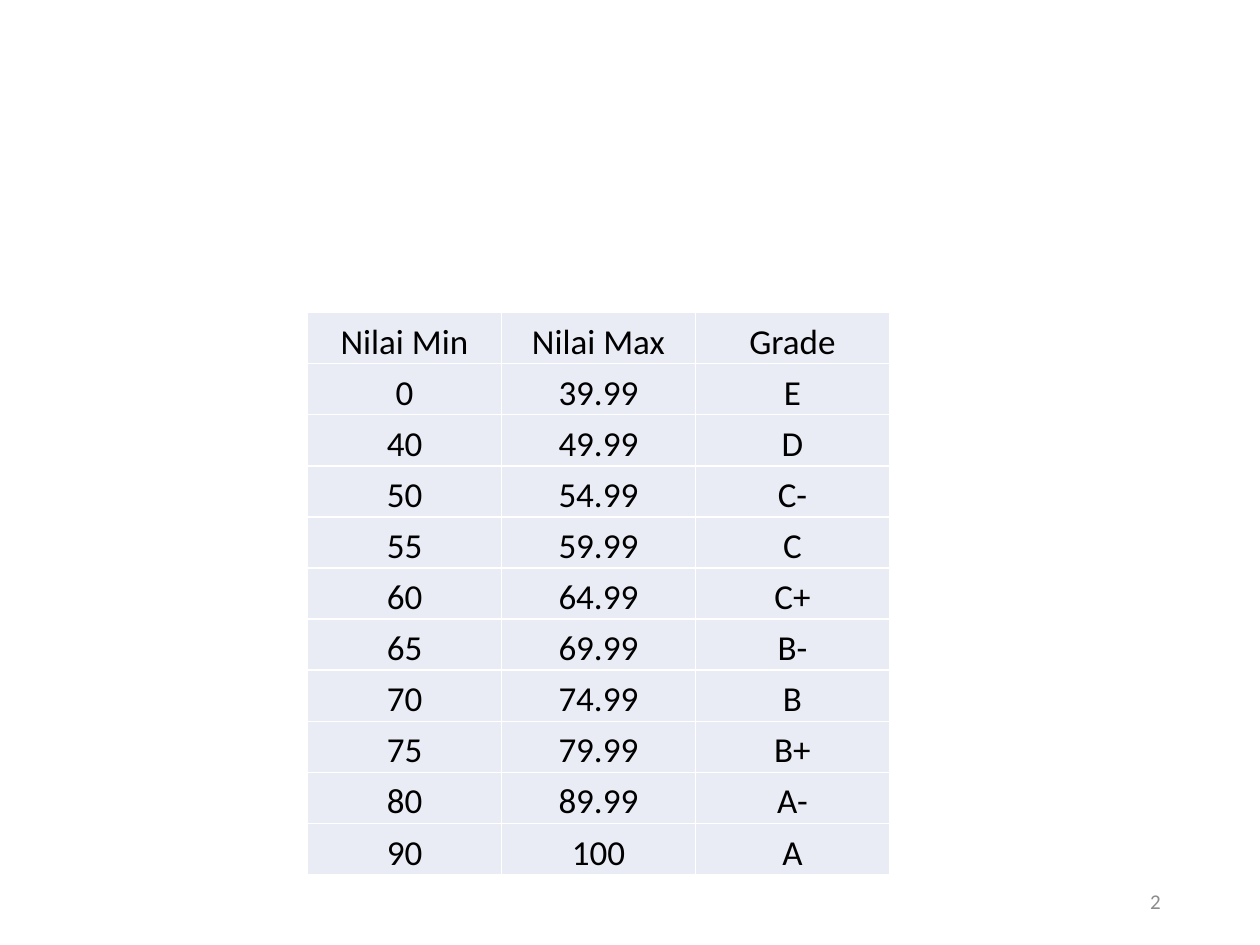
from pptx import Presentation
from pptx.dml.color import RGBColor
from pptx.enum.text import MSO_ANCHOR, PP_ALIGN
from pptx.oxml.ns import qn
from pptx.util import Cm, Pt
from lxml import etree

MIDDLE, BOTTOM = MSO_ANCHOR.MIDDLE, MSO_ANCHOR.BOTTOM
CENTER, RIGHT = PP_ALIGN.CENTER, PP_ALIGN.RIGHT
BLACK = RGBColor(0x00, 0x00, 0x00)
GREY = RGBColor(0x8C, 0x8C, 0x8C)
WHITE = RGBColor(0xFF, 0xFF, 0xFF)
PALE_BLUE = RGBColor(0xE9, 0xEB, 0xF5)

# Content
HEADER = ("Nilai Min", "Nilai Max", "Grade")
GRADES = [
    ("0", "39.99", "E"),
    ("40", "49.99", "D"),
    ("50", "54.99", "C-"),
    ("55", "59.99", "C"),
    ("60", "64.99", "C+"),
    ("65", "69.99", "B-"),
    ("70", "74.99", "B"),
    ("75", "79.99", "B+"),
    ("80", "89.99", "A-"),
    ("90", "100", "A"),
]
PAGE_NUMBER = "2"

# Layout and formats
TABLE_LEFT, TABLE_TOP = Cm(6.2), Cm(6.3)
COL_WIDTH, ROW_HEIGHT = Cm(3.91), Cm(1.03)
CELL_FORMAT = {
    "vertical_anchor": BOTTOM,
    "margin_left": Cm(0.02),
    "margin_right": Cm(0.02),
    "margin_top": Cm(0.02),
    "margin_bottom": 0,
}
CELL_FONT = {"name": "Calibri", "size": Pt(20)}
NUMBER_FONT = {"name": "Calibri", "size": Pt(12)}


def write(tf, text, align, font, color):
    p = tf.paragraphs[0]
    p.alignment = align
    r = p.add_run()
    r.text = text
    for name, value in font.items():
        setattr(r.font, name, value)
    r.font.color.rgb = color


def add_borders(cell, color, width):
    tc_pr = cell._tc.get_or_add_tcPr()
    for side in ("a:lnL", "a:lnR", "a:lnT", "a:lnB"):
        ln = etree.SubElement(tc_pr, qn(side), w=str(width))
        fill = etree.SubElement(ln, qn("a:solidFill"))
        etree.SubElement(fill, qn("a:srgbClr"), val=str(color))


def add_grade_table(s):
    rows = [HEADER] + GRADES
    n_rows, n_cols = len(rows), len(HEADER)
    table = s.shapes.add_table(n_rows, n_cols, TABLE_LEFT, TABLE_TOP,
                               COL_WIDTH * n_cols, ROW_HEIGHT * n_rows).table
    table.first_row = table.horz_banding = False
    for col in table.columns:
        col.width = COL_WIDTH
    for row, values in zip(table.rows, rows):
        row.height = ROW_HEIGHT
        for cell, text in zip(row.cells, values):
            for name, value in CELL_FORMAT.items():
                setattr(cell, name, value)
            add_borders(cell, WHITE, Pt(1))
            cell.fill.solid()
            cell.fill.fore_color.rgb = PALE_BLUE
            write(cell.text_frame, text, CENTER, CELL_FONT, BLACK)


def add_page_number(s):
    sp = s.shapes.add_textbox(Cm(17.93), Cm(17.65), Cm(5.72), Cm(1.02))
    tf = sp.text_frame
    tf.word_wrap = True
    tf.vertical_anchor = MIDDLE
    write(tf, PAGE_NUMBER, RIGHT, NUMBER_FONT, GREY)


def main():
    prs = Presentation()
    prs.slide_width, prs.slide_height = Cm(25.4), Cm(19.05)
    s = prs.slides.add_slide(prs.slide_layouts[6])
    add_page_number(s)
    add_grade_table(s)
    prs.save("out.pptx")


if __name__ == "__main__":
    main()
